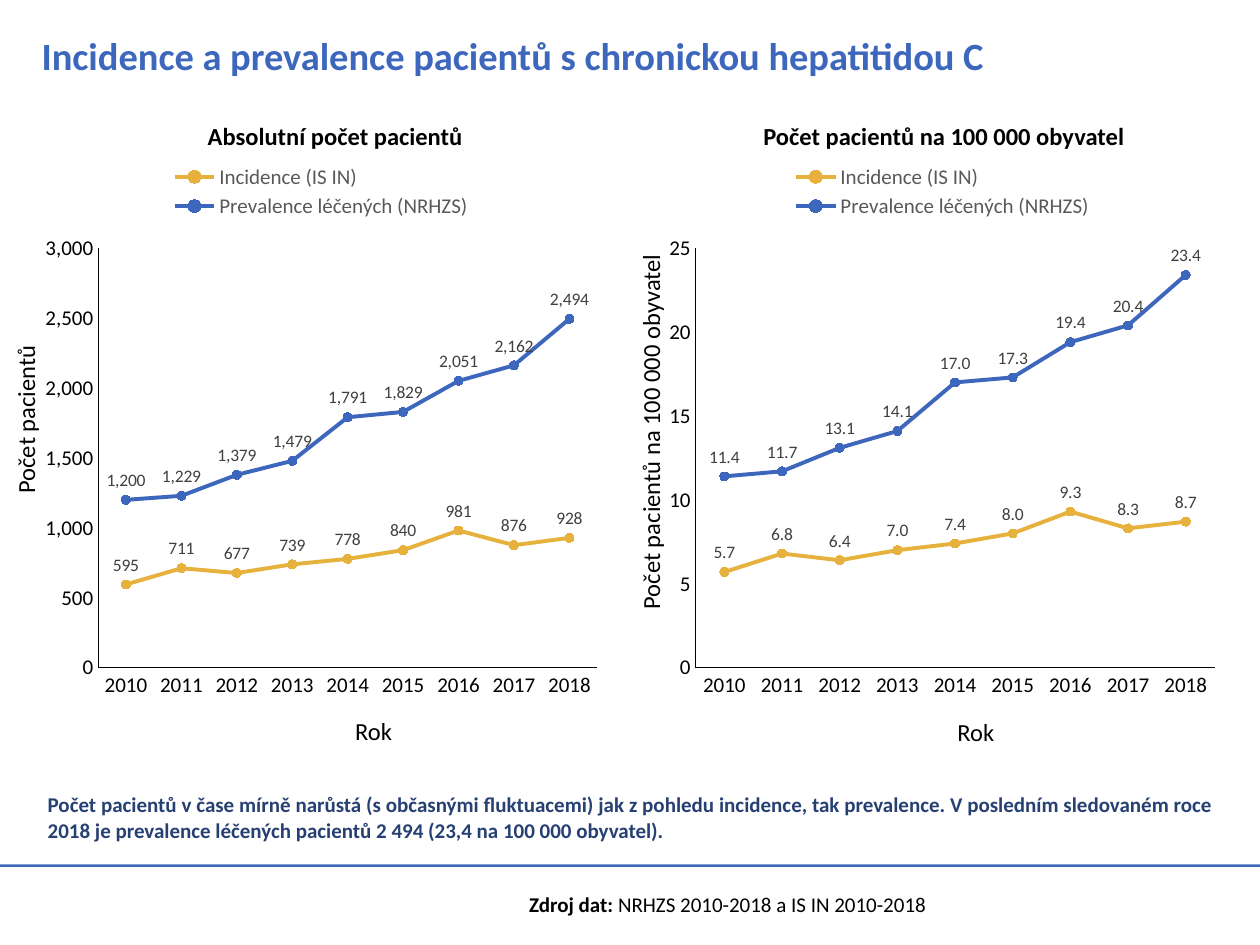
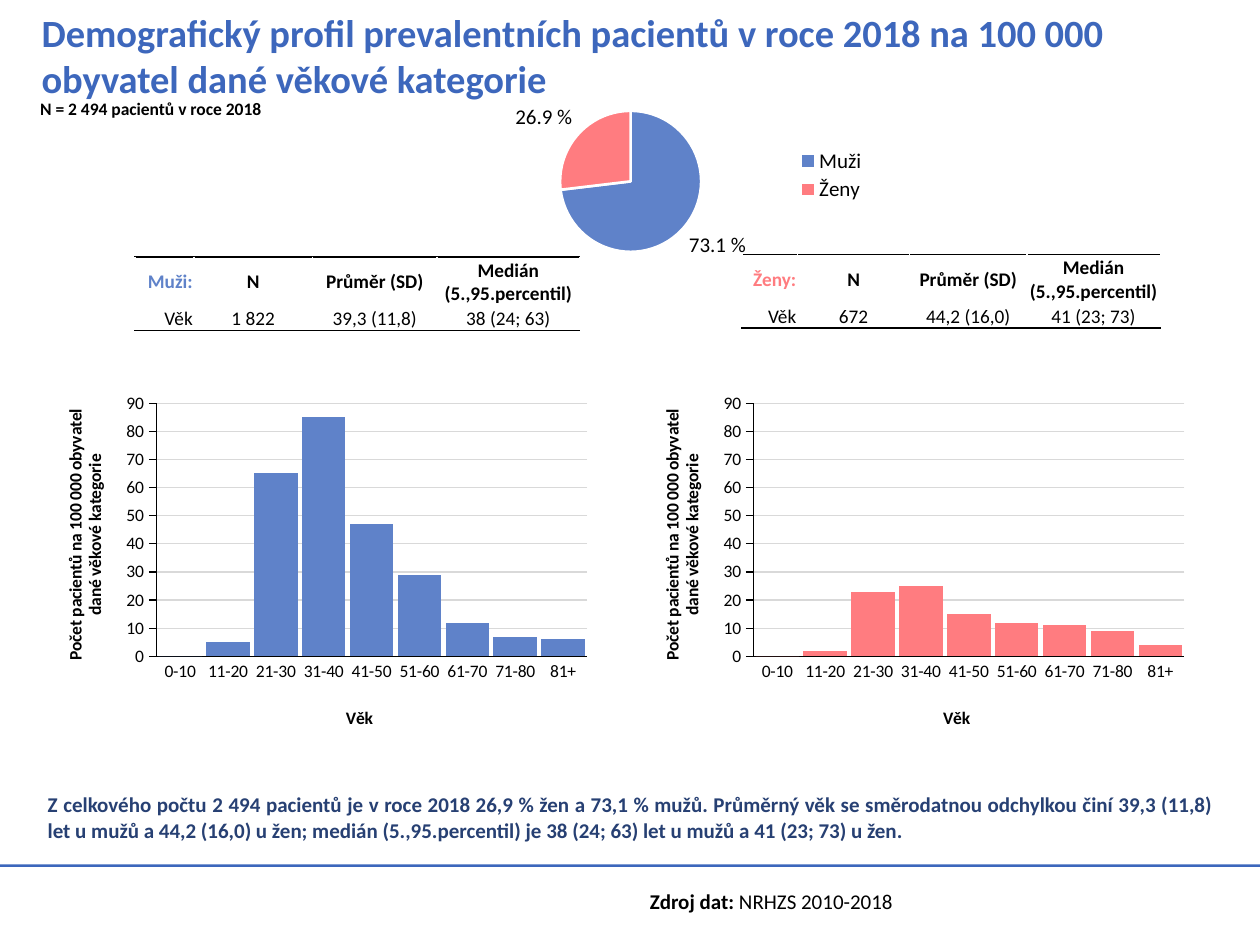
"""Build two slides on the incidence, prevalence and age of hepatitis C patients."""
from dataclasses import dataclass

from lxml import etree
from pptx import Presentation
from pptx.chart.data import CategoryChartData
from pptx.dml.color import RGBColor
from pptx.enum.chart import (XL_CHART_TYPE, XL_LABEL_POSITION, XL_LEGEND_POSITION,
                             XL_MARKER_STYLE, XL_TICK_MARK)
from pptx.enum.shapes import MSO_SHAPE
from pptx.enum.text import MSO_ANCHOR, MSO_AUTO_SIZE, PP_ALIGN
from pptx.oxml import parse_xml
from pptx.oxml.ns import nsdecls, qn
from pptx.util import Inches, Pt

LINE, BAR, PIE = (XL_CHART_TYPE.LINE_MARKERS, XL_CHART_TYPE.COLUMN_CLUSTERED,
                  XL_CHART_TYPE.PIE)
ABOVE, OUTER = XL_LABEL_POSITION.ABOVE, XL_LABEL_POSITION.OUTSIDE_END
TOP, BOTTOM = XL_LEGEND_POSITION.TOP, XL_LEGEND_POSITION.BOTTOM
NONE, OUT = XL_TICK_MARK.NONE, XL_TICK_MARK.OUTSIDE
CIRCLE, RECT = XL_MARKER_STYLE.CIRCLE, MSO_SHAPE.RECTANGLE
MIDDLE, LOW = MSO_ANCHOR.MIDDLE, MSO_ANCHOR.BOTTOM
LEFT, CENTER, RIGHT, JUST = (PP_ALIGN.LEFT, PP_ALIGN.CENTER, PP_ALIGN.RIGHT,
                             PP_ALIGN.JUSTIFY)
FIXED = MSO_AUTO_SIZE.NONE


@dataclass(frozen=True)
class Theme:
    face: str = "Calibri"
    blue: str = "3D67BC"
    navy: str = "274073"
    gold: str = "E7B13D"
    men: str = "5F82C9"
    women: str = "FF7C80"
    black: str = "000000"
    white: str = "FFFFFF"
    key: str = "595959"
    label: str = "404040"
    grid: str = "D9D9D9"
    head: int = 22
    sub: int = 14
    body: int = 12
    cell: int = 11
    small: int = 10


T = Theme()

TREND = {
    "title": "Incidence a prevalence pacientů s chronickou hepatitidou C",
    "note": "Počet pacientů v čase mírně narůstá (s občasnými fluktuacemi) jak z pohledu "
            "incidence, tak prevalence. V posledním sledovaném roce 2018 je prevalence "
            "léčených pacientů 2 494 (23,4 na 100 000 obyvatel).",
    "source": ("NRHZS 2010-2018 a IS IN 2010-2018", (4.1, 7.03, 3.39, 0.3), False),
}
PROFILE = {
    "title": "Demografický profil prevalentních pacientů v roce 2018 na 100 000 "
             "obyvatel dané věkové kategorie",
    "note": "Z celkového počtu 2 494 pacientů je v roce 2018 26,9 % žen a 73,1 % mužů. "
            "Průměrný věk se směrodatnou odchylkou činí 39,3 (11,8) let u mužů a "
            "44,2 (16,0) u žen; medián (5.,95.percentil) je 38 (24; 63) let u mužů a "
            "41 (23; 73) u žen.",
    "source": ("NRHZS 2010-2018", (5.06, 7, 4.68, 0.3), True),
}

YEARS = [str(year) for year in range(2010, 2019)]
NAMES = ("Incidence (IS IN)", "Prevalence léčených (NRHZS)")
LINES = [
    {"box": (0.27, 1.19, 4.56, 4.44), "plot": (0.78, 1.97, 3.96, 3.33),
     "key": (1.34, 1.27, 2.42, 0.5), "top": 3000, "step": 500,
     "forms": ("###0", "#,##0"),
     "vals": ([595, 711, 677, 739, 778, 840, 981, 876, 928],
              [1200, 1229, 1379, 1479, 1791, 1829, 2051, 2162, 2494])},
    {"box": (5.22, 1.19, 4.52, 4.44), "plot": (5.52, 1.97, 4.12, 3.33),
     "key": (6.27, 1.27, 2.42, 0.5), "top": 25, "step": 5,
     "forms": ("0.0", "#,##0.0"),
     "vals": ([5.7, 6.8, 6.4, 7, 7.4, 8, 9.3, 8.3, 8.7],
              [11.4, 11.7, 13.1, 14.1, 17, 17.3, 19.4, 20.4, 23.4])},
]
RATE = "Počet pacientů na 100 000 obyvatel"
CAPS = [
    ("Rok", (2.72, 5.63, 0.5, 0.34), 0, False),
    ("Rok", (7.5, 5.64, 0.5, 0.34), 0, False),
    ("Počet pacientů", (-0.49, 3.15, 1.39, 0.34), 270, False),
    (RATE, (3.64, 3.24, 3.05, 0.34), 270, False),
    ("Absolutní počet pacientů", (1.55, 0.91, 2.24, 0.34), 0, True),
    (RATE, (5.96, 0.91, 3.09, 0.34), 0, True),
]

AGES = ["0-10", *(f"{low}1-{low + 1}0" for low in range(1, 8)), "81+"]
HEADS = ("N", "Průměr (SD)", "Medián (5.,95.percentil)")
SEXES = [
    {"name": "Muži", "color": T.men, "share": 73.1, "left": 0.34, "plot": 1.24,
     "vals": [0, 5, 65, 85, 47, 29, 12, 7, 6],
     "stats": ("1 822", "39,3 (11,8)", "38 (24; 63)"),
     "at": (1.07, 2.04), "cols": (0.47, 0.94, 0.99, 1.13)},
    {"name": "Ženy", "color": T.women, "share": 26.9, "left": 5.08, "plot": 5.98,
     "vals": [0, 2, 23, 25, 15, 12, 11, 9, 4],
     "stats": ("672", "44,2 (16,0)", "41 (23; 73)"),
     "at": (5.89, 2.02), "cols": (0.44, 0.89, 0.93, 1.06)},
]


def rgb(color):
    return RGBColor.from_string(color)


def style(font, size, color=T.black, bold=False):
    font.name, font.size, font.bold = T.face, Pt(size), bold
    font.color.rgb = rgb(color)


def paint(shape, color):
    shape.fill.solid()
    shape.fill.fore_color.rgb = rgb(color)


def stroke(line, color, width):
    line.color.rgb, line.width = rgb(color), Pt(width)


def inch(box):
    return [Inches(part) for part in box]


def write(slide, box, text, size, color=T.black, bold=False, wrap=True, align=LEFT):
    shape = slide.shapes.add_textbox(*inch(box))
    frame = shape.text_frame
    frame.word_wrap = wrap
    para = frame.paragraphs[0]
    para.text, para.alignment = text, align
    style(para.font, size, color, bold)
    return shape


def start(deck, page):
    slide = deck.slides.add_slide(deck.slide_layouts[5])
    rule = slide.shapes.add_shape(RECT, *inch((0, 6.86, 10, 0.02)))
    rule.shadow.inherit = False
    paint(rule, T.blue)
    rule.line.fill.background()

    title = slide.shapes.title
    title.left, title.top, title.width, title.height = inch((0.23, 0.19, 9.69, 0.5))
    frame = title.text_frame
    frame.text = page["title"]
    frame.auto_size, frame.vertical_anchor = FIXED, MIDDLE
    frame.paragraphs[0].alignment = LEFT
    style(frame.paragraphs[0].font, T.head, T.blue, True)

    note = write(slide, (0.28, 6.2, 9.45, 0.57), page["note"], T.body, T.navy, True,
                 align=JUST)
    note.text_frame.vertical_anchor = MIDDLE
    text, box, wrap = page["source"]
    para = write(slide, box, "Zdroj dat: ", T.body, wrap=wrap).text_frame.paragraphs[0]
    para.runs[0].font.bold = True
    para.add_run().text = text
    return slide


def place(node, box, area, inner=False):
    """Pin a chart part to a place given in slide inches; titles take no size."""
    for old in node.findall(qn("c:layout")):
        node.remove(old)
    layout = etree.Element(qn("c:layout"))
    manual = etree.SubElement(layout, qn("c:manualLayout"))
    tags = [("layoutTarget", "inner")] if inner else []
    tags += [("xMode", "edge"), ("yMode", "edge")]
    spots = [(area[0] - box[0]) / box[2], (area[1] - box[1]) / box[3]]
    spots += [size / full for size, full in zip(area[2:], box[2:])]
    tags += [(tag, f"{spot:.4f}") for tag, spot in zip("xywh", spots)]
    for tag, val in tags:
        etree.SubElement(manual, qn(f"c:{tag}")).set("val", val)
    first = node[0].tag in (qn("c:legendPos"), qn("c:tx"))
    node.insert(int(first), layout)


def draw(slide, kind, box, cats, series, plot):
    data = CategoryChartData()
    data.categories = cats
    for name, vals in series:
        data.add_series(name, vals)
    chart = slide.shapes.add_chart(kind, *inch(box), data).chart
    chart.has_title = chart.has_legend = False
    style(chart.font, T.small)
    chart.plots[0].vary_by_categories = kind == PIE
    place(chart.element.find(".//" + qn("c:plotArea")), box, plot, True)
    return chart


def add_key(chart, pos, box, area, color):
    chart.has_legend = True
    chart.legend.position, chart.legend.include_in_layout = pos, False
    style(chart.legend.font, T.body, color)
    place(chart.element.find(".//" + qn("c:legend")), box, area)


def set_axes(chart, size, top, step, tick):
    value = chart.value_axis
    for axis, mark in ((chart.category_axis, NONE), (value, tick)):
        axis.major_tick_mark, axis.minor_tick_mark = mark, NONE
        style(axis.tick_labels.font, size)
        stroke(axis.format.line, T.black, 0.75)
    value.minimum_scale, value.maximum_scale, value.major_unit = 0, top, step
    value.has_major_gridlines = False
    value.tick_labels.number_format = "#,##0"
    value.tick_labels.number_format_is_linked = False


def set_labels(labels, form, pos, size, color):
    labels.number_format, labels.number_format_is_linked = form, False
    labels.position = pos
    style(labels.font, size, color)


def draw_lines(slide, spec):
    box = spec["box"]
    chart = draw(slide, LINE, box, YEARS, zip(NAMES, spec["vals"]), spec["plot"])
    add_key(chart, TOP, box, spec["key"], T.key)
    set_axes(chart, T.body, spec["top"], spec["step"], NONE)
    for line, form, color in zip(chart.series, spec["forms"], (T.gold, T.blue)):
        line.smooth = False
        stroke(line.format.line, color, 2.25)
        line.marker.style, line.marker.size = CIRCLE, 5
        paint(line.marker.format, color)
        stroke(line.marker.format.line, color, 0.75)
        line.data_labels.show_value = True
        set_labels(line.data_labels, form, ABOVE, T.small, T.label)


def draw_bars(slide, sex):
    left = sex["left"]
    box = (left, 3.06, 4.4, 2.8)
    chart = draw(slide, BAR, box, AGES, [("Series 1", sex["vals"])],
                 (sex["plot"], 3.2, 3.42, 2.01))
    chart.plots[0].gap_width = 10
    paint(chart.series[0].format, sex["color"])
    set_axes(chart, T.small, 90, 10, OUT)
    chart.value_axis.has_major_gridlines = True
    stroke(chart.value_axis.major_gridlines.format.line, T.grid, 0.75)
    for axis, text, spot in (
            (chart.category_axis, "Věk", (left + 2.38, 5.58)),
            (chart.value_axis, RATE + " dané věkové kategorie", (left + 0.14, 3.22))):
        frame = axis.axis_title.text_frame
        frame.text = text
        style(frame.paragraphs[0].font, T.small, bold=True)
        place(axis.axis_title.element, box, spot)


def draw_pie(slide):
    box = (3.27, 0.7, 4.14, 1.8)
    chart = draw(slide, PIE, box, [sex["name"] for sex in SEXES],
                 [("Series 1", [sex["share"] for sex in SEXES])],
                 (4.09, 0.88, 1.83, 1.12))
    add_key(chart, BOTTOM, box, (6.3, 1.15, 0.6, 0.48), T.black)
    for num, sex in enumerate(SEXES):
        part = chart.series[0].points[num].format
        paint(part, sex["color"])
        stroke(part.line, T.white, 1.5)
    pie = chart.plots[0]
    pie.has_data_labels = True
    pie.data_labels.show_value, pie.data_labels.show_percentage = False, True
    set_labels(pie.data_labels, "0.0\\ %", OUTER, T.body, T.black)


def edge(cell, side):
    line = parse_xml(f'<a:{side} {nsdecls("a")} w="9525"><a:solidFill>'
                     f'<a:srgbClr val="{T.black}"/></a:solidFill></a:{side}>')
    cell._tc.get_or_add_tcPr().insert(0, line)


def draw_table(slide, sex):
    rows = [(sex["name"] + ":", *HEADS), ("Věk", *sex["stats"])]
    high, cols = (0.39, 0.18), sex["cols"]
    box = (*sex["at"], sum(cols), sum(high))
    table = slide.shapes.add_table(2, 4, *inch(box)).table
    for col, width in zip(table.columns, cols):
        col.width = Inches(width)
    for i, row in enumerate(rows):
        table.rows[i].height = Inches(high[i])
        for j, text in enumerate(row):
            cell = table.cell(i, j)
            cell.margin_left = cell.margin_right = cell.margin_top = Inches(0.01)
            cell.margin_bottom = 0
            cell.vertical_anchor = LOW if i and j else MIDDLE
            cell.text = text
            para = cell.text_frame.paragraphs[0]
            para.alignment = CENTER if j else RIGHT
            style(para.font, T.cell, T.black if i or j else sex["color"], not i)
            paint(cell, T.white)
            edge(cell, "lnB" if i else "lnT")


def main():
    deck = Presentation()
    deck.slide_width, deck.slide_height = Inches(10), Inches(7.5)

    slide = start(deck, TREND)
    for spec in LINES:
        draw_lines(slide, spec)
    for text, box, turn, bold in CAPS:
        write(slide, box, text, T.sub, bold=bold, wrap=False).rotation = turn

    slide = start(deck, PROFILE)
    for sex in SEXES:
        draw_bars(slide, sex)
    write(slide, (0.22, 0.73, 9.05, 0.27), "N = 2 494 pacientů v roce 2018", T.small,
          bold=True)
    draw_pie(slide)
    for sex in SEXES:
        draw_table(slide, sex)
    deck.save("out.pptx")


if __name__ == "__main__":
    main()
